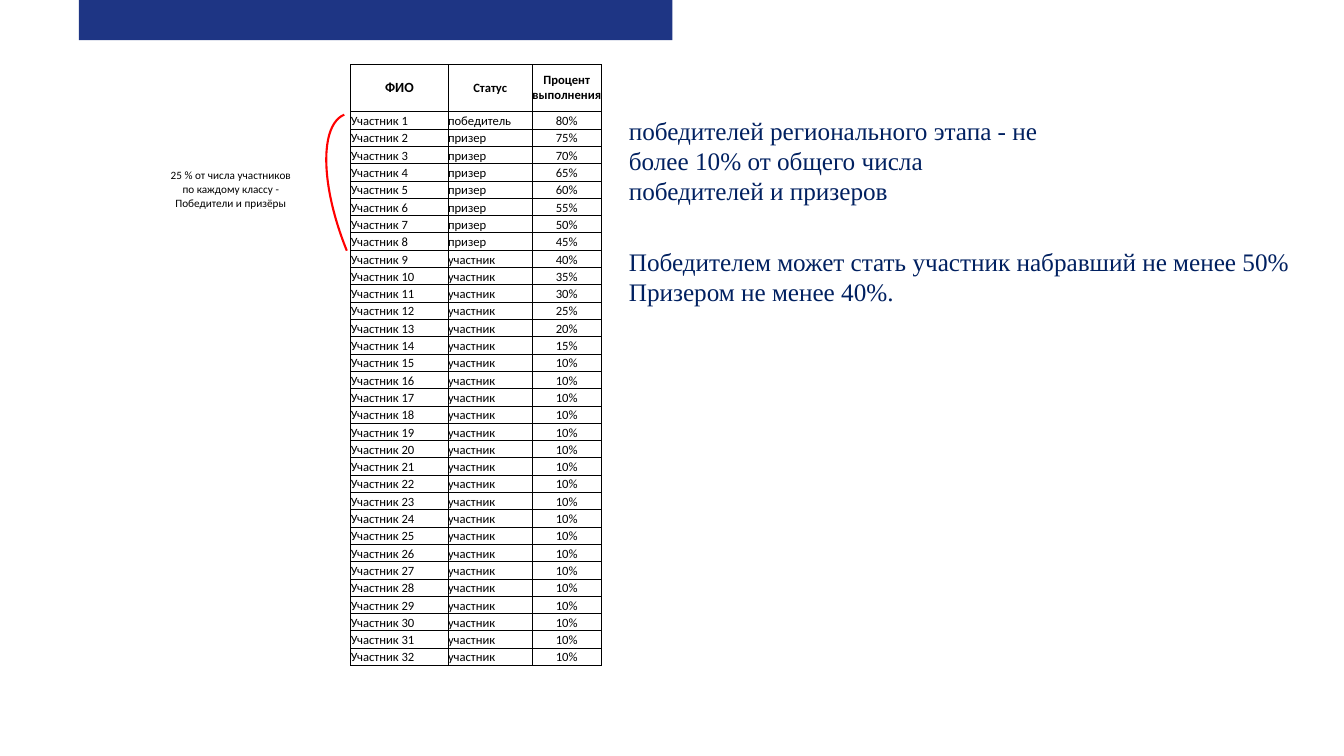
"""Build the slide on how winners and prize-holders are chosen."""
from dataclasses import dataclass
from itertools import product

from lxml.etree import SubElement
from pptx import Presentation
from pptx.dml.color import RGBColor
from pptx.enum.shapes import MSO_SHAPE as Preset
from pptx.enum.text import MSO_ANCHOR as Anchor, MSO_AUTO_SIZE as AutoSize, PP_ALIGN as Align
from pptx.oxml.ns import qn
from pptx.slide import Slide
from pptx.table import Table, _Cell as Cell
from pptx.util import Pt

BLACK, RED, BLUE, NAVY = "000000", "FF0000", "1E3584", "002060"
COLUMN_WIDTHS = (93.6, 38.88, 69.5, 60.2, 49.2, 48.9)
HEADINGS = (("ФИО", 10), ("Статус", 9), ("Процент выполнения", 9))
PEOPLE = 32
PRIZE_PLACES = 8
TOP_ROW, HEADER_ROW, PERSON_ROW = 13.7, 33.8, 12.36
FIRST_GRID_COLUMN = 2
EDGES = {"a:lnL": (0, -1), "a:lnR": (0, 1), "a:lnT": (-1, 0), "a:lnB": (1, 0)}


@dataclass
class Style:
    """Look of a run of text."""
    size: float
    font: str = "Calibri"
    color: str = BLACK
    bold: bool = False


@dataclass
class Rule:
    """Statement placed to the right of the table."""
    text: str
    top: float
    width: float
    height: float


RULES = (
    Rule("победителей регионального этапа - не более 10% от общего числа победителей и призеров",
         78.5, 312.5, 72.7),
    Rule("Победителем может стать участник набравший не менее 50% Призером не менее 40%.",
         172.1, 491, 51.1),
)


def rgb(color: str) -> RGBColor:
    """Turn a hex string into a colour."""
    return RGBColor.from_string(color)


def add_span(para, text: str, style: Style) -> None:
    """Add one styled run to a paragraph."""
    span = para.add_run()
    span.text = text
    span.font.size = Pt(style.size)
    span.font.name = style.font
    span.font.bold = style.bold
    span.font.color.rgb = rgb(style.color)


def fill_cell(cell: Cell, text: str, style: Style, align: Align, anchor: Anchor) -> None:
    """Write text into a table cell."""
    cell.vertical_anchor = anchor
    para = cell.text_frame.paragraphs[0]
    para.alignment = align
    add_span(para, text, style)


def in_grid(row: int, column: int) -> bool:
    """Tell whether a cell belongs to the ruled part of the table."""
    return 1 <= row <= PEOPLE + 1 and FIRST_GRID_COLUMN <= column < FIRST_GRID_COLUMN + len(HEADINGS)


def prepare_cell(cell: Cell, row: int, column: int) -> None:
    """Clear a cell's margins and fill, and rule the edges of the grid."""
    cell.margin_left = cell.margin_right = cell.margin_top = cell.margin_bottom = 0
    properties = cell._tc.get_or_add_tcPr()
    for tag, (down, right) in EDGES.items():
        if in_grid(row, column) or in_grid(row + down, column + right):
            line = SubElement(properties, qn(tag), w=str(Pt(0.5)))
            SubElement(SubElement(line, qn("a:solidFill")), qn("a:srgbClr"), val=BLACK)
    cell.fill.background()
    SubElement(cell.text_frame.paragraphs[0]._p, qn("a:endParaRPr"), sz="800")


def status(place: int) -> str:
    """Give the status earned by a place."""
    if place == 1:
        return "победитель"
    return "призер" if place <= PRIZE_PLACES else "участник"


def fill_table(table: Table) -> None:
    """Write the headings, the ranking and the side note."""
    for offset, (heading, size) in enumerate(HEADINGS):
        fill_cell(table.cell(1, FIRST_GRID_COLUMN + offset), heading,
                  Style(size, bold=True), Align.CENTER, Anchor.MIDDLE)
    for place in range(1, PEOPLE + 1):
        percent = max(85 - 5 * place, 10)
        values = (f"Участник {place}", status(place), f"{percent}%")
        for offset, (value, align) in enumerate(zip(values, (Align.LEFT, Align.LEFT, Align.CENTER))):
            fill_cell(table.cell(place + 1, FIRST_GRID_COLUMN + offset), value,
                      Style(9), align, Anchor.BOTTOM)
    table.cell(1, 1).merge(table.cell(10, 1))
    note = table.cell(4, 0)
    note.merge(table.cell(8, 0))
    fill_cell(note, "25 % от числа участников по каждому классу - Победители и призёры",
              Style(8), Align.CENTER, Anchor.MIDDLE)


def add_ranking(page: Slide) -> None:
    """Add the ranking table."""
    heights = (TOP_ROW, HEADER_ROW) + (PERSON_ROW,) * PEOPLE
    frame = page.shapes.add_table(len(heights), len(COLUMN_WIDTHS), Pt(118.1), Pt(32.3),
                                  Pt(sum(COLUMN_WIDTHS)), Pt(sum(heights)))
    table = frame.table
    table.first_row = table.horz_banding = False
    table._tbl.tblPr.find(qn("a:tableStyleId")).text = "{2D5ABB26-0587-4C30-8999-92F81FD0307C}"
    for column, width in zip(table.columns, COLUMN_WIDTHS):
        column.width = Pt(width)
    for row, height in zip(table.rows, heights):
        row.height = Pt(height)
    for row, column in product(range(len(heights)), range(len(COLUMN_WIDTHS))):
        prepare_cell(table.cell(row, column), row, column)
    fill_table(table)


def add_bar(page: Slide) -> None:
    """Add the blue bar along the top edge."""
    bar = page.shapes.add_shape(Preset.RECTANGLE, Pt(56.4), 0, Pt(424), Pt(28.8))
    bar.shadow.inherit = False
    bar.fill.solid()
    bar.fill.fore_color.rgb = rgb(BLUE)
    bar.line.fill.background()


def add_arc(page: Slide) -> None:
    """Add the red arc that brackets the prize places."""
    arc = page.shapes.add_shape(Preset.ARC, Pt(189.4), Pt(131), Pt(181.4), Pt(69.8))
    arc.rotation = 247.9
    arc.shadow.inherit = False
    arc.fill.background()
    arc.line.color.rgb = rgb(RED)
    arc.line.width = Pt(1.5)


def add_rule(page: Slide, rule: Rule) -> None:
    """Add one statement as a text box."""
    box = page.shapes.add_textbox(Pt(442.1), Pt(rule.top), Pt(rule.width), Pt(rule.height))
    box.text_frame.word_wrap = True
    box.text_frame.auto_size = AutoSize.SHAPE_TO_FIT_TEXT
    add_span(box.text_frame.paragraphs[0], rule.text, Style(18, "Times New Roman", NAVY))


def main() -> None:
    """Build and save the deck."""
    deck = Presentation()
    deck.slide_width, deck.slide_height = Pt(960), Pt(540)
    page = deck.slides.add_slide(deck.slide_layouts[6])
    add_bar(page)
    add_ranking(page)
    add_arc(page)
    for rule in RULES:
        add_rule(page, rule)
    deck.save("out.pptx")


if __name__ == "__main__":
    main()
